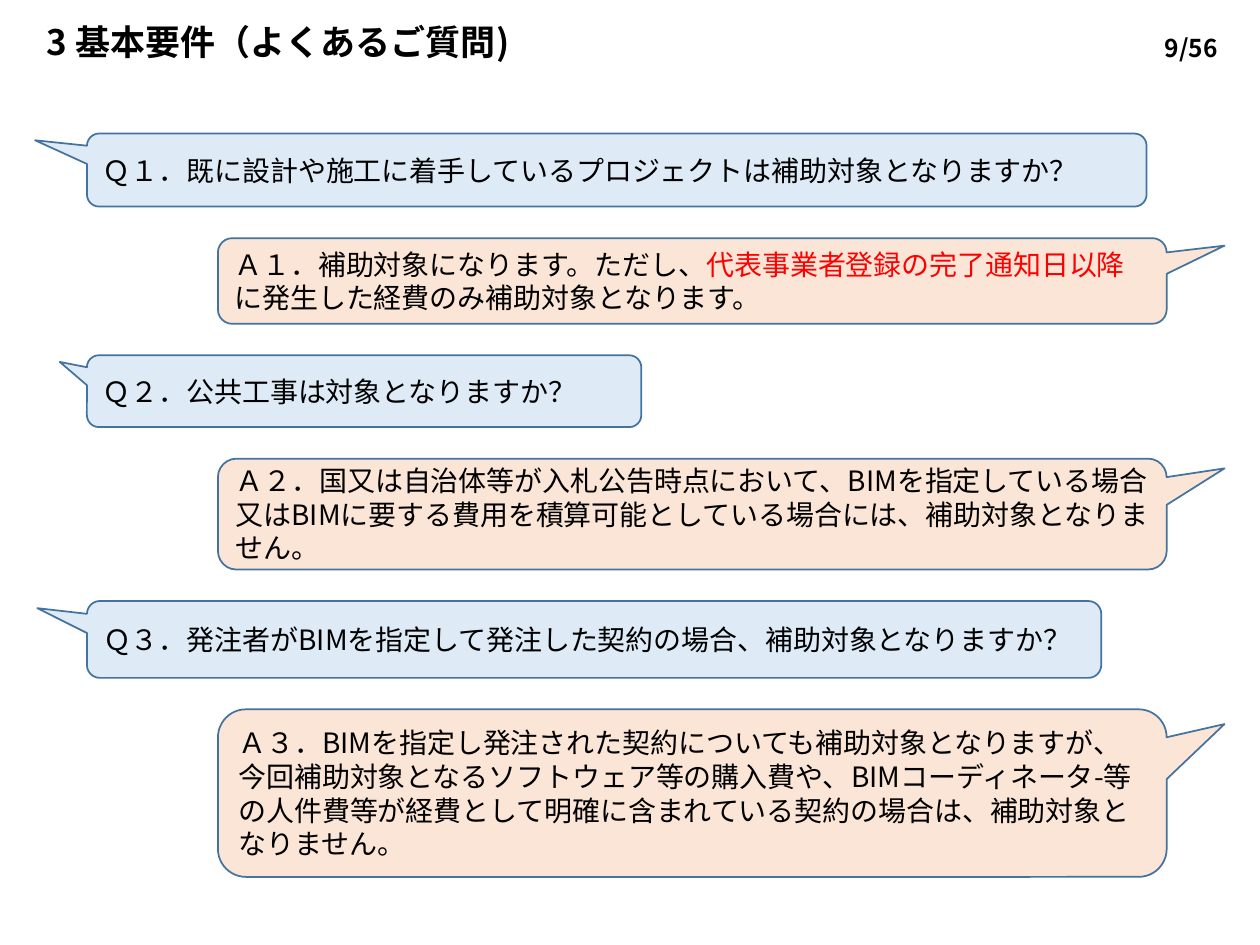
from lxml import etree
from pptx import Presentation
from pptx import util as u
from pptx.dml.color import RGBColor
from pptx.enum import shapes, text
from pptx.oxml.ns import qn

FONT = "Noto Sans CJK JP"
HUES = {"ink": "000000", "alert": "FF0000", "ask": "DEEBF7", "reply": "FBE5D6", "edge": "43739E"}
COLS, ROWS = 100, 75
TOP, GAP = 10.6, 2.5
SIDES = {
    "ask": {"left": 6.9, "tail": (-0.549, -0.407, 0.167)},
    "reply": {"left": 17.3, "tail": (0.561, -0.412, 0.167)},
}
TALKS = [
    ("ask", 84.1, 5.8, [("Ｑ１．既に設計や施工に着手しているプロジェクトは補助対象となりますか？", "ink")]),
    ("reply", 75.3, 6.8, [
        ("Ａ１．補助対象になります。ただし、", "ink"),
        ("代表事業者登録の完了通知日以降", "alert"),
        ("に発生した経費のみ補助対象となります。", "ink"),
    ]),
    ("ask", 44, 5.7, [("Ｑ２．公共工事は対象となりますか？", "ink")]),
    ("reply", 75.3, 8.8, [(
        "Ａ２．国又は自治体等が入札公告時点において、BIMを指定している場合又はBIMに"
        "要する費用を積算可能としている場合には、補助対象となりません。", "ink")]),
    ("ask", 80.5, 6.1, [("Ｑ３．発注者がBIMを指定して発注した契約の場合、補助対象となりますか？", "ink")]),
    ("reply", 75.3, 13.3, [(
        "Ａ３．BIMを指定し発注された契約についても補助対象となりますが、今回補助対象となる"
        "ソフトウェア等の購入費や、BIMコーディネータ-等の人件費等が経費として明確に含まれている"
        "契約の場合は、補助対象となりません。", "ink")]),
]


def hue(name):
    """Return the named colour."""
    return RGBColor.from_string(HUES[name])


def write(frame, parts, size=16, bold=False, align=text.PP_ALIGN.LEFT, pitch=None):
    """Fill a text frame with one paragraph of (text, colour) parts."""
    frame.word_wrap = True
    frame.auto_size = text.MSO_AUTO_SIZE.NONE
    frame.vertical_anchor = text.MSO_ANCHOR.MIDDLE
    para = frame.paragraphs[0]
    para.alignment = align
    if pitch:
        para.line_spacing = u.Pt(pitch)
    for words, tint in parts:
        run = para.add_run()
        run.text = words
        font = run.font
        font.name, font.size, font.bold = FONT, u.Pt(size), bold
        font.color.rgb = hue(tint)
        etree.SubElement(run._r.get_or_add_rPr(), qn("a:ea"), typeface=FONT)


class Deck:
    """Holds the style, the grid and the current slide."""

    def __init__(self):
        """Start a deck with one title-only slide."""
        self.show = Presentation()
        self.show.slide_width, self.show.slide_height = u.Inches(10), u.Inches(7.5)
        self.slide = self.show.slides.add_slide(self.show.slide_layouts[5])

    def area(self, col, row, wide, high):
        """Turn grid units into slide lengths."""
        dx, dy = self.show.slide_width / COLS, self.show.slide_height / ROWS
        return [round(n) for n in (col * dx, row * dy, wide * dx, high * dy)]

    def title(self, words, *cell):
        """Place and fill the title placeholder."""
        head = self.slide.shapes.title
        head.left, head.top, head.width, head.height = self.area(*cell)
        write(head.text_frame, [(words, "ink")], size=20, bold=True, pitch=40)

    def label(self, words, *cell):
        """Add the page label."""
        box = self.slide.shapes.add_textbox(*self.area(*cell))
        write(box.text_frame, [(words, "ink")], size=14, bold=True,
              align=text.PP_ALIGN.CENTER, pitch=40)

    def bubble(self, kind, row, wide, high, parts):
        """Add a speech bubble for a question or an answer."""
        side = SIDES[kind]
        box = self.slide.shapes.add_shape(
            shapes.MSO_SHAPE.ROUNDED_RECTANGULAR_CALLOUT,
            *self.area(side["left"], row, wide, high))
        for i, shift in enumerate(side["tail"]):
            box.adjustments[i] = shift
        box.shadow.inherit = False
        box.fill.solid()
        box.fill.fore_color.rgb = hue(kind)
        box.line.color.rgb = hue("edge")
        box.line.width = u.Pt(1)
        write(box.text_frame, parts)


def main():
    """Build and save the slide."""
    deck = Deck()
    deck.title("3 基本要件（よくあるご質問)", 2.7, -0.5, 81.2, 5.4)
    deck.label("9/56", 89.1, 0, 10.9, 4.3)
    row = TOP
    for kind, wide, high, parts in TALKS:
        deck.bubble(kind, row, wide, high, parts)
        row += high + GAP
    deck.show.save("out.pptx")


if __name__ == "__main__":
    main()
